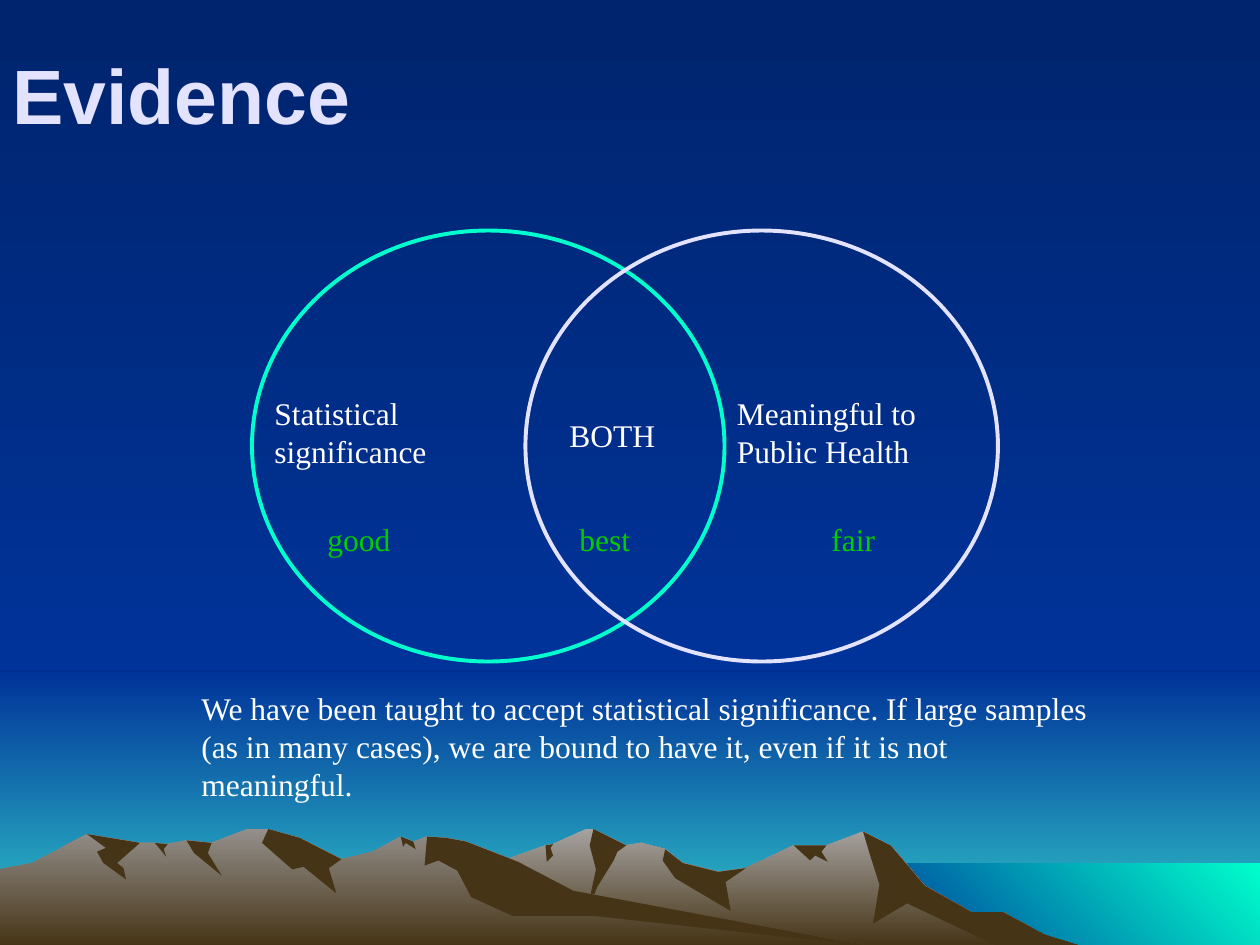
from dataclasses import dataclass

from pptx import Presentation
from pptx.dml.color import RGBColor
from pptx.enum.shapes import MSO_SHAPE
from pptx.enum.text import MSO_AUTO_SIZE
from pptx.util import Inches, Pt

RECTANGLE = MSO_SHAPE.RECTANGLE
ELLIPSE = MSO_SHAPE.OVAL
GROW = MSO_AUTO_SIZE.SHAPE_TO_FIT_TEXT

NIGHT = RGBColor(0x00, 0x24, 0x6D)
BLUE = RGBColor(0x00, 0x33, 0x99)
TEAL = RGBColor(0x33, 0xCC, 0xCC)
AQUA = RGBColor(0x00, 0xFF, 0xCC)
LAVENDER = RGBColor(0xE3, 0xE3, 0xFF)
WHITE = RGBColor(0xFF, 0xFF, 0xFF)
GREEN = RGBColor(0x00, 0xCC, 0x00)
BROWN = RGBColor(0x46, 0x34, 0x16)
PALE_ROCK = RGBColor(0xA5, 0xA2, 0x9F)
GREY_ROCK = RGBColor(0x93, 0x8F, 0x8B)

DOWN = 270
UP_RIGHT = 45

SLIDE_WIDTH = 10
SLIDE_HEIGHT = 7.5
HORIZON = 5.33
SHORE = 6.83
WATERLINE = 6.85
FOOT = 7.51


@dataclass
class Shadow:
    start: float
    end: float
    lower_edge: list


@dataclass
class Range:
    peak_color: RGBColor
    skyline: list
    shadows: list

    def body(self):
        return self.skyline + [(self.skyline[0][0], FOOT)]

    def shaded_face(self, shadow):
        crest = [(x, y) for x, y in self.skyline if shadow.start <= x <= shadow.end]
        return crest + shadow.lower_edge


EAST_RANGE = Range(
    PALE_ROCK,
    skyline=[
        (2.58, FOOT), (3.27, 7.09), (3.94, 6.85), (4.33, 6.71), (4.39, 6.7), (4.65, 6.58),
        (4.71, 6.58), (4.97, 6.71), (5.09, 6.69), (5.28, 6.74), (5.42, 6.85), (5.7, 6.92),
        (5.92, 6.89), (6.3, 6.71), (6.56, 6.71), (6.85, 6.6), (7.07, 6.71), (7.34, 7.03),
        (7.71, 7.24), (7.96, 7.24), (8.29, 7.42), (8.58, FOOT)],
    shadows=[
        Shadow(4.33, 4.39, [(4.37, 6.73), (4.39, 6.79), (4.34, 6.84)]),
        Shadow(4.71, 4.97, [(4.9, 6.76), (4.87, 6.83), (4.74, 7.04), (4.65, 7.27),
                            (4.73, 6.9), (4.68, 6.71)]),
        Shadow(5.28, 5.92, [(5.76, 7), (5.8, 7.23), (5.36, 6.97), (5.26, 6.83)]),
        Shadow(6.3, 6.56, [(6.52, 6.76), (6.57, 6.84), (6.47, 6.79), (6.43, 6.83)]),
        Shadow(6.85, 8.58, [(7.92, FOOT), (7.2, 7.17), (6.93, 7.33), (6.98, 7.02),
                            (6.91, 6.8)]),
    ])

WEST_RANGE = Range(
    GREY_ROCK,
    skyline=[
        (0, 6.9), (0.26, 6.85), (0.69, 6.62), (1.11, 6.69), (1.23, 6.69), (1.33, 6.7),
        (1.48, 6.67), (1.68, 6.69), (1.96, 6.58), (2.13, 6.58), (2.38, 6.65), (2.71, 6.82),
        (2.96, 6.76), (3.18, 6.64), (3.28, 6.68), (3.39, 6.64), (3.54, 6.65), (3.7, 6.68),
        (4.11, 6.84), (4.55, 7.07), (6.9, FOOT)],
    shadows=[
        Shadow(0.69, 1.11, [(0.93, 6.85), (0.98, 6.89), (1, 6.98), (0.82, 6.85),
                            (0.77, 6.76), (0.84, 6.73)]),
        Shadow(1.23, 1.33, [(1.3, 6.74), (1.32, 6.8)]),
        Shadow(1.48, 1.68, [(1.65, 6.77), (1.76, 6.95), (1.54, 6.77)]),
        Shadow(2.13, 2.71, [(2.61, 6.89), (2.67, 7.09), (2.41, 6.88), (2.32, 6.9),
                            (2.08, 6.69)]),
        Shadow(3.18, 3.28, [(3.3, 6.74), (3.22, 6.69), (3.2, 6.72)]),
        Shadow(3.39, 6.9, [(4.72, 7.27), (4.07, 7.27), (3.74, 7.12), (3.63, 6.91),
                           (3.48, 6.83), (3.37, 6.87)]),
    ])


class SlideBuilder:
    body_font = "Times New Roman"
    body_size = 18
    outline_width = Pt(2.25)
    tab_gap = Inches(1)

    def __init__(self, slide):
        self.slide = slide

    def gradient(self, fill, start, end, angle=DOWN):
        fill.gradient()
        fill.gradient_angle = angle
        for stop, color in zip(fill.gradient_stops, (start, end)):
            stop.color.rgb = color

    def backdrop(self, start, end):
        self.gradient(self.slide.background.fill, start, end)

    def preset(self, kind, left, top, width, height):
        shape = self.slide.shapes.add_shape(
            kind, Inches(left), Inches(top), Inches(width), Inches(height))
        shape.shadow.inherit = False
        return shape

    def band(self, left, top, right, bottom, start, end, angle=DOWN):
        band = self.preset(RECTANGLE, left, top, right - left, bottom - top)
        self.gradient(band.fill, start, end, angle)
        band.line.fill.background()

    def circle(self, left, top, width, height, color):
        circle = self.preset(ELLIPSE, left, top, width, height)
        circle.fill.background()
        circle.line.color.rgb = color
        circle.line.width = self.outline_width

    def outline(self, points):
        first, *others = [(Inches(x), Inches(y)) for x, y in points]
        builder = self.slide.shapes.build_freeform(*first)
        builder.add_line_segments(others, close=True)
        shape = builder.convert_to_shape()
        shape.shadow.inherit = False
        shape.line.fill.background()
        return shape

    def mountains(self, mountain_range):
        body = self.outline(mountain_range.body())
        self.gradient(body.fill, mountain_range.peak_color, BROWN)
        for shadow in mountain_range.shadows:
            face = self.outline(mountain_range.shaded_face(shadow))
            face.fill.solid()
            face.fill.fore_color.rgb = BROWN

    def text(self, words, left, top, width, height, color=WHITE,
             font=body_font, size=body_size, bold=False):
        box = self.slide.shapes.add_textbox(
            Inches(left), Inches(top), Inches(width), Inches(height))
        frame = box.text_frame
        frame.word_wrap = True
        frame.auto_size = GROW
        paragraph = frame.paragraphs[0]
        paragraph.text = words
        paragraph.font.name = font
        paragraph.font.size = Pt(size)
        paragraph.font.bold = bold
        paragraph.font.color.rgb = color
        paragraph._p.get_or_add_pPr().set("defTabSz", str(self.tab_gap))


def draw_landscape(page):
    page.backdrop(NIGHT, BLUE)
    page.band(0, HORIZON, SLIDE_WIDTH, SLIDE_HEIGHT, BLUE, TEAL)
    page.band(0, 0, SLIDE_WIDTH, HORIZON, NIGHT, BLUE)
    page.band(SHORE, WATERLINE, SLIDE_WIDTH, SLIDE_HEIGHT, BLUE, AQUA, UP_RIGHT)
    for mountain_range in (EAST_RANGE, WEST_RANGE):
        page.mountains(mountain_range)


def draw_evidence(page):
    page.text("Evidence", 0, 0.33, SLIDE_WIDTH, 0.83, LAVENDER, "Arial", 44, True)
    for left, color in ((2, AQUA), (4.17, LAVENDER)):
        page.circle(left, 1.83, 3.75, 3.42, color)
    page.text("Statistical significance", 2.08, 3.08, 1.92, 0.9)
    page.text("Meaningful to Public Health", 5.75, 3.08, 2.17, 0.9)
    page.text("BOTH", 4.42, 3.25, 1.25, 0.5)
    page.text("good\t\tbest\t\tfair", 2.5, 4.08, 4.92, 0.5, GREEN)
    page.text("We have been taught to accept statistical significance. If large samples "
              "(as in many cases), we are bound to have it, even if it is not meaningful.",
              1.5, 5.42, 7.25, 1.3)


def main():
    presentation = Presentation()
    presentation.slide_width = Inches(SLIDE_WIDTH)
    presentation.slide_height = Inches(SLIDE_HEIGHT)
    page = SlideBuilder(presentation.slides.add_slide(presentation.slide_layouts[6]))
    draw_landscape(page)
    draw_evidence(page)
    presentation.save("out.pptx")


if __name__ == "__main__":
    main()
